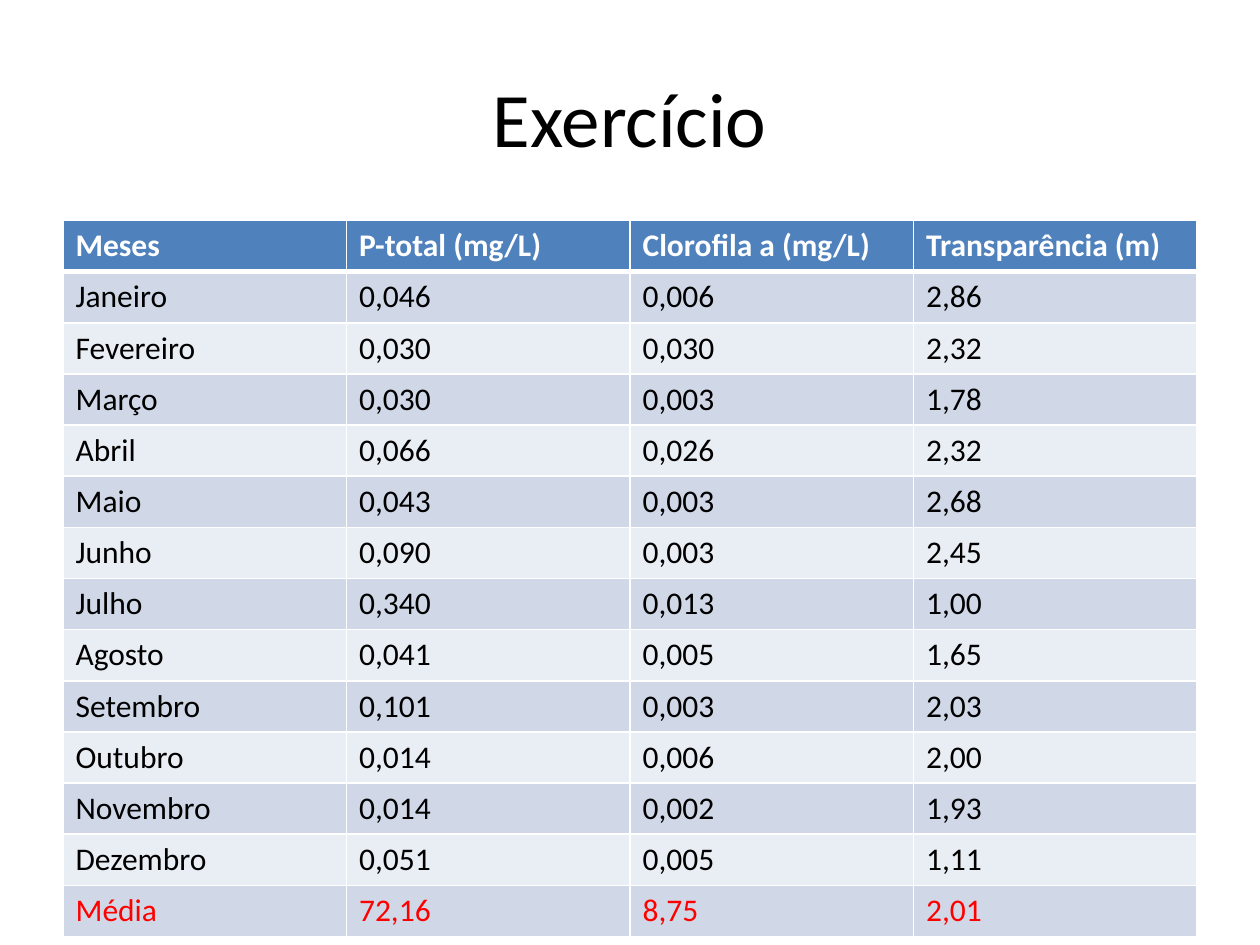
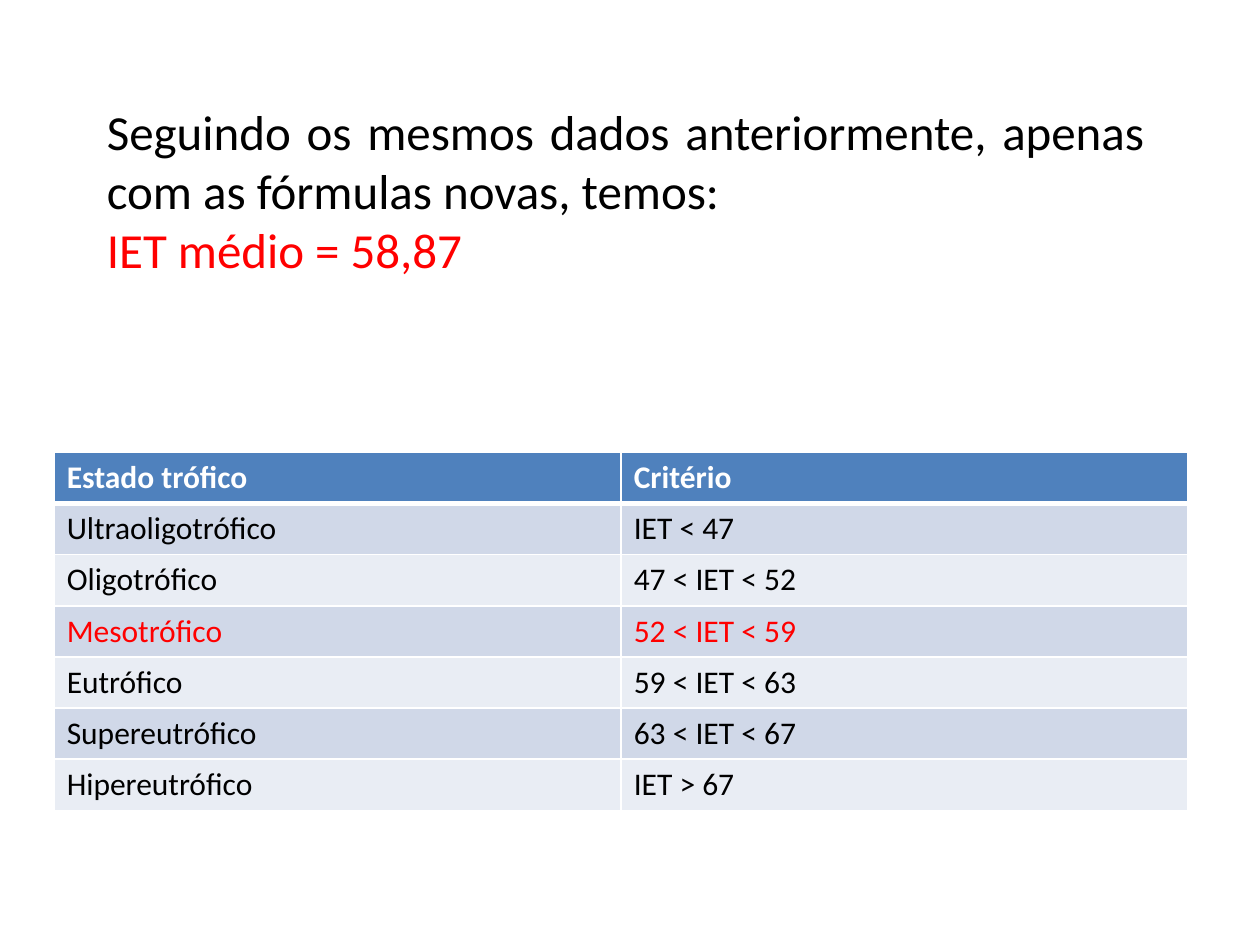
from dataclasses import dataclass

from lxml import etree
from pptx import Presentation
from pptx.dml.color import RGBColor
from pptx.enum.text import MSO_ANCHOR, PP_ALIGN
from pptx.oxml.ns import qn
from pptx.util import Inches, Pt

CENTER, JUSTIFY, LEFT = PP_ALIGN.CENTER, PP_ALIGN.JUSTIFY, PP_ALIGN.LEFT
TOP, MIDDLE = MSO_ANCHOR.TOP, MSO_ANCHOR.MIDDLE

FONT = "Calibri"
BLACK, WHITE, RED = "000000", "FFFFFF", "FF0000"
HEADER = "4F81BD"
BANDS = ("D0D8E8", "E9EDF4")

SLIDE_W, SLIDE_H = Inches(10), Inches(7.5)
GRID_COLS, GRID_ROWS = 100, 75
TABLE_COLS = 90
TABLE_ROW = 4.06


@dataclass(frozen=True)
class Box:
    col: float
    row: float
    cols: float
    rows: float

    def emu(self) -> tuple[int, int, int, int]:
        return grid_x(self.col), grid_y(self.row), grid_x(self.cols), grid_y(self.rows)


@dataclass(frozen=True)
class DataTable:
    col: float
    row: float
    lines: tuple[str, ...]
    highlight: int


MONTHS = DataTable(5, 17.5, (
    "Meses|P-total (mg/L)|Clorofila a (mg/L)|Transparência (m)",
    "Janeiro|0,046|0,006|2,86",
    "Fevereiro|0,030|0,030|2,32",
    "Março|0,030|0,003|1,78",
    "Abril|0,066|0,026|2,32",
    "Maio|0,043|0,003|2,68",
    "Junho|0,090|0,003|2,45",
    "Julho|0,340|0,013|1,00",
    "Agosto|0,041|0,005|1,65",
    "Setembro|0,101|0,003|2,03",
    "Outubro|0,014|0,006|2,00",
    "Novembro|0,014|0,002|1,93",
    "Dezembro|0,051|0,005|1,11",
    "Média|72,16|8,75|2,01",
), highlight=13)

TROPHIC_STATES = DataTable(4.3, 35.9, (
    "Estado trófico|Critério",
    "Ultraoligotrófico|IET < 47",
    "Oligotrófico|47 < IET < 52",
    "Mesotrófico|52 < IET < 59",
    "Eutrófico|59 < IET < 63",
    "Supereutrófico|63 < IET < 67",
    "Hipereutrófico|IET > 67",
), highlight=3)


def grid_x(cols: float) -> int:
    return round(SLIDE_W * cols / GRID_COLS)


def grid_y(rows: float) -> int:
    return round(SLIDE_H * rows / GRID_ROWS)


def rgb(value: str) -> RGBColor:
    return RGBColor.from_string(value)


def write(p, text: str, *, size: float = 18, color: str = BLACK,
          bold: bool = False, align=LEFT) -> None:
    p.alignment = align
    r = p.add_run()
    r.text = text
    r.font.name, r.font.size, r.font.bold = FONT, Pt(size), bold
    r.font.color.rgb = rgb(color)


def add_text_box(slide, box: Box, anchor=TOP):
    tf = slide.shapes.add_textbox(*box.emu()).text_frame
    tf.word_wrap = True
    tf.vertical_anchor = anchor
    return tf


def set_borders(cell, top: float, bottom: float) -> None:
    tc_pr = cell._tc.get_or_add_tcPr()
    for side, width in (("L", 1), ("R", 1), ("T", top), ("B", bottom)):
        ln = etree.SubElement(tc_pr, qn(f"a:ln{side}"), w=str(Pt(width)))
        fill = etree.SubElement(ln, qn("a:solidFill"))
        etree.SubElement(fill, qn("a:srgbClr"), val=WHITE)


def add_data_table(slide, data: DataTable) -> None:
    rows = [line.split("|") for line in data.lines]
    box = Box(data.col, data.row, TABLE_COLS, TABLE_ROW * len(rows))
    table = slide.shapes.add_table(len(rows), len(rows[0]), *box.emu()).table
    for i, values in enumerate(rows):
        table.rows[i].height = grid_y(TABLE_ROW)
        header = i == 0
        color = WHITE if header else RED if i == data.highlight else BLACK
        for j, text in enumerate(values):
            cell = table.cell(i, j)
            set_borders(cell, top=3 if i == 1 else 1, bottom=3 if header else 1)
            cell.fill.solid()
            cell.fill.fore_color.rgb = rgb(HEADER if header else BANDS[(i - 1) % 2])
            write(cell.text_frame.paragraphs[0], text, color=color, bold=header)


def add_slide(prs):
    slide = prs.slides.add_slide(prs.slide_layouts[6])
    slide.background.fill.solid()
    slide.background.fill.fore_color.rgb = rgb(WHITE)
    return slide


def build_exercise(prs) -> None:
    slide = add_slide(prs)
    tf = add_text_box(slide, Box(5, 3, 90, 12.5), MIDDLE)
    write(tf.paragraphs[0], "Exercício", size=44, align=CENTER)
    add_data_table(slide, MONTHS)


def build_result(prs) -> None:
    slide = add_slide(prs)
    add_data_table(slide, TROPHIC_STATES)
    tf = add_text_box(slide, Box(7.5, 7.6, 84.3, 15.1))
    write(tf.paragraphs[0],
          "Seguindo os mesmos dados anteriormente, apenas com as fórmulas novas, temos:",
          size=28, align=JUSTIFY)
    write(tf.add_paragraph(), "IET médio = 58,87", size=28, color=RED, align=JUSTIFY)


def main() -> None:
    prs = Presentation()
    prs.slide_width, prs.slide_height = SLIDE_W, SLIDE_H
    build_exercise(prs)
    build_result(prs)
    prs.save("out.pptx")


if __name__ == "__main__":
    main()
